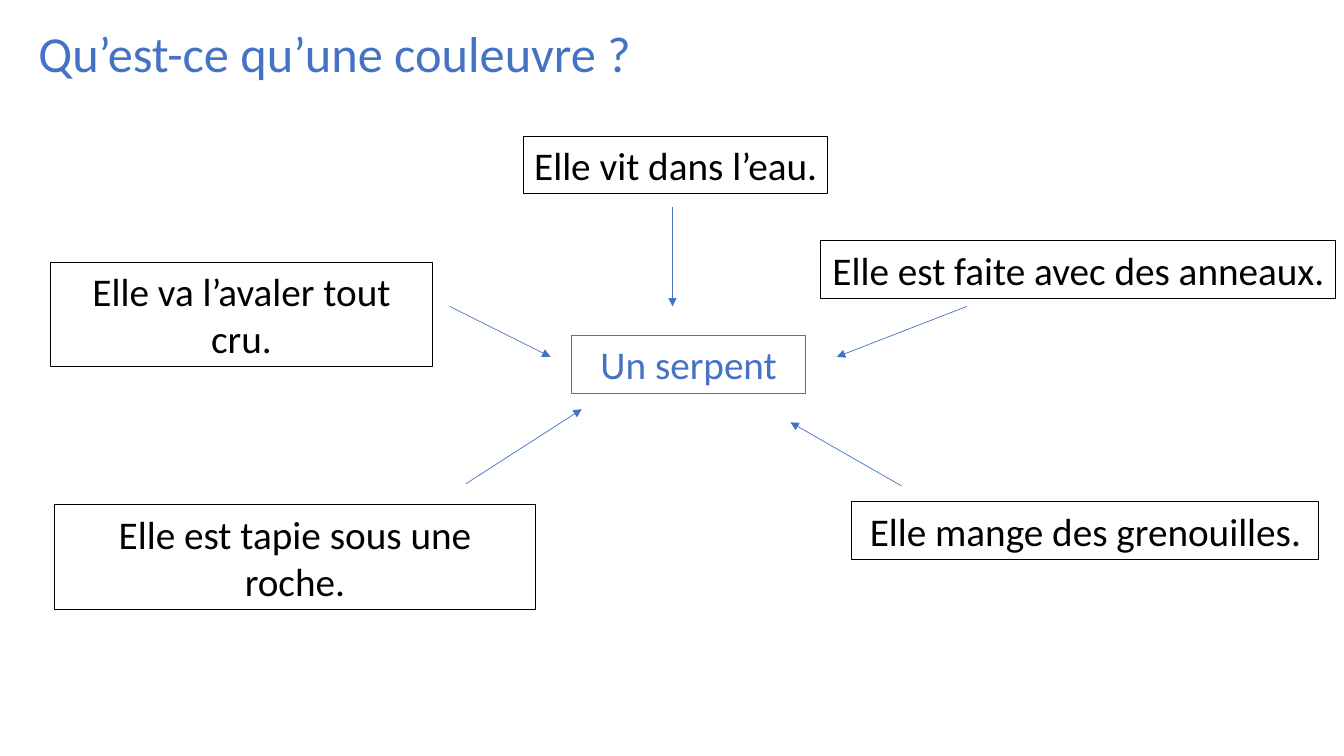
import pptx
import pptx.dml.color
import pptx.enum.shapes
import pptx.enum.text
import pptx.oxml
import pptx.oxml.ns
import pptx.util

Inches = pptx.util.Inches
BLUE = pptx.dml.color.RGBColor(0x44, 0x72, 0xC4)
BLACK = pptx.dml.color.RGBColor(0x00, 0x00, 0x00)

TITLE_BOX = (0.14, 0.17, 6.36, 0.71)
MAP_BOX = (0.5, 1.35, 12.75, 4.7)
ONE_LINE, TWO_LINES = 0.57, 1.04

CLUES = [
    ("Elle vit dans l’eau.", 4.69, 0, 3.02, ONE_LINE, (6.17, 0.7, 6.17, 1.69)),
    ("Elle va l’avaler tout cru.", 0, 1.25, 3.79, TWO_LINES, (3.96, 1.69, 4.96, 2.19)),
    ("Elle est faite avec des anneaux.", 7.64, 1.04, 5.11, ONE_LINE, (9.09, 1.69, 7.8, 2.19)),
    ("Elle est tapie sous une roche.", 0.04, 3.66, 4.77, TWO_LINES, (4.12, 3.45, 5.27, 2.71)),
    ("Elle mange des grenouilles.", 7.95, 3.63, 4.63, ONE_LINE, (8.44, 3.47, 7.34, 2.84)),
]
ANSWER = ("Un serpent", 5.17, 1.98, 2.32, ONE_LINE)


def apply_format(target, values):
    """Set each named attribute of the target."""
    for name, value in values.items():
        setattr(target, name, value)


def write_text(shape, text, size, color, wrap):
    """Write one centred paragraph in the shape."""
    frame = shape.text_frame
    apply_format(frame, {
        "auto_size": pptx.enum.text.MSO_AUTO_SIZE.NONE,
        "word_wrap": wrap,
        "vertical_anchor": pptx.enum.text.MSO_ANCHOR.TOP,
        "margin_left": Inches(0.1),
        "margin_right": Inches(0.1),
        "margin_top": Inches(0.05),
        "margin_bottom": Inches(0.05),
    })
    para = frame.paragraphs[0]
    para.alignment = pptx.enum.text.PP_ALIGN.CENTER
    span = para.add_run()
    span.text = text
    apply_format(span.font, {"name": "Calibri", "size": pptx.util.Pt(size)})
    span.font.color.rgb = color


def add_title(page, box):
    """Place the question in the title placeholder."""
    title = page.shapes.title
    names = ("left", "top", "width", "height")
    apply_format(title, dict(zip(names, map(Inches, box))))
    write_text(title, "Qu’est-ce qu’une couleuvre ?", 36, BLUE, False)


def add_label(page, box, text, color):
    """Draw an outlined rectangle with its text."""
    label = page.shapes.add_shape(
        pptx.enum.shapes.MSO_SHAPE.RECTANGLE, *map(Inches, box))
    label.shadow.inherit = False
    label.fill.background()
    label.line.color.rgb = color
    label.line.width = pptx.util.Pt(0.75)
    write_text(label, text, 28, color, box[3] == TWO_LINES)


def add_arrow(page, ends):
    """Draw a thin arrow towards the answer."""
    arrow = page.shapes.add_connector(
        pptx.enum.shapes.MSO_CONNECTOR.STRAIGHT, *map(Inches, ends))
    arrow.line.color.rgb = BLUE
    arrow.line.width = pptx.util.Pt(0.5)
    head = pptx.oxml.parse_xml(
        f'<a:tailEnd {pptx.oxml.ns.nsdecls("a")} type="triangle"/>')
    arrow.line._get_or_add_ln().append(head)
    effects = pptx.oxml.parse_xml(f'<a:effectLst {pptx.oxml.ns.nsdecls("a")}/>')
    arrow._element.spPr.append(effects)


def add_map(page, box):
    """Place the clues around the answer, with an arrow from each."""
    left, top = box[:2]
    for text, x, y, width, height, _ in CLUES:
        add_label(page, (left + x, top + y, width, height), text, BLACK)
    text, x, y, width, height = ANSWER
    add_label(page, (left + x, top + y, width, height), text, BLUE)
    for *_, (x1, y1, x2, y2) in CLUES:
        add_arrow(page, (left + x1, top + y1, left + x2, top + y2))


def main():
    """Build the slide and save the deck."""
    deck = pptx.Presentation()
    apply_format(deck, {"slide_width": Inches(13.33), "slide_height": Inches(7.5)})
    page = deck.slides.add_slide(deck.slide_layouts.get_by_name("Title Only"))
    add_title(page, TITLE_BOX)
    add_map(page, MAP_BOX)
    deck.save("out.pptx")


if __name__ == "__main__":
    main()
